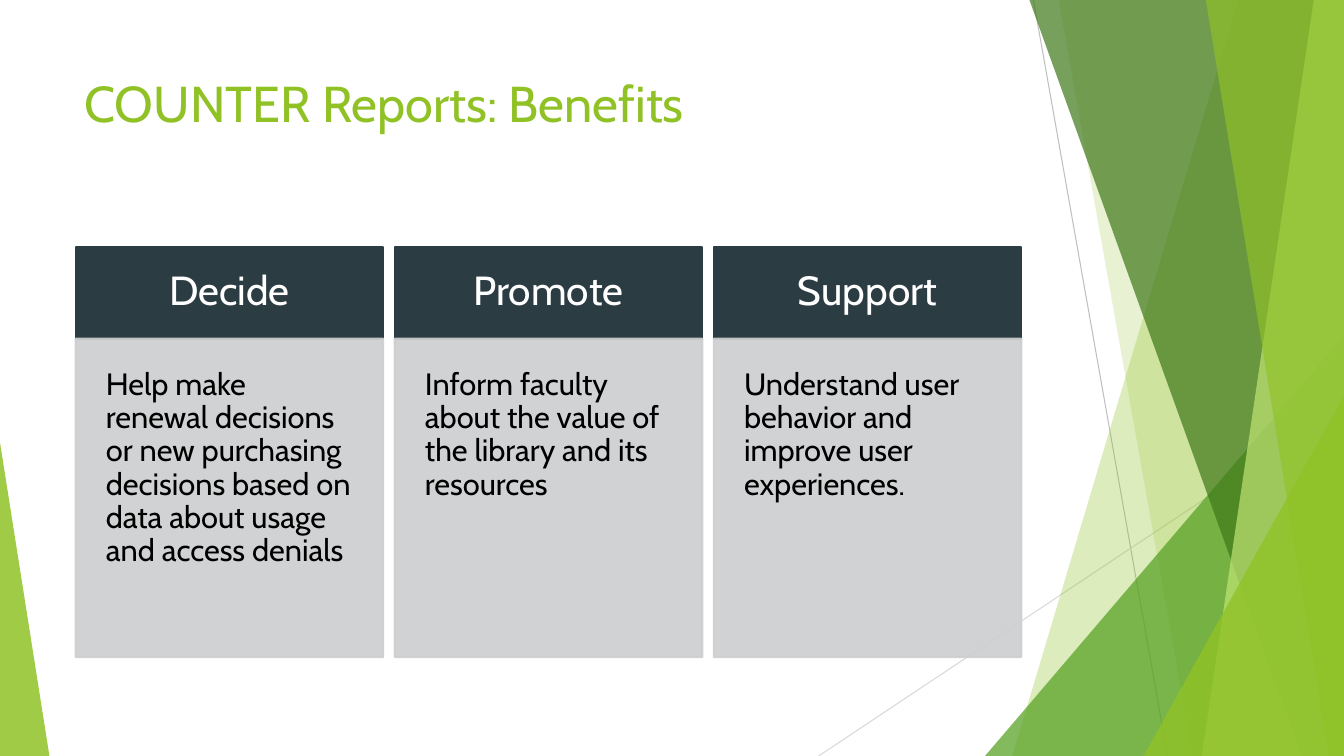
import pptx
import pptx.util
import pptx.dml.color
import pptx.enum.shapes
import pptx.enum.text
import pptx.oxml
import pptx.oxml.ns
from pptx.util import Inches

FONT = "Cabin"
COLORS = {
    "lime": "90C226", "green": "54A021", "forest": "3F7819", "pale": "C0E474",
    "slate": "2C3C43", "silver": "CDCECF", "white": "FFFFFF", "black": "000000",
    "gray": "BFBFBF", "light_gray": "D9D9D9",
}
ALIGN = pptx.enum.text.PP_ALIGN
ANCHOR = pptx.enum.text.MSO_ANCHOR
SHAPES = pptx.enum.shapes.MSO_SHAPE

BENEFITS = [
    ("Decide", "Help make renewal decisions or new purchasing decisions "
               "based on data about usage and access denials"),
    ("Promote", "Inform faculty about the value of the library and its resources"),
    ("Support", "Understand user behavior and improve user experiences."),
]
HEADING = {"size": 29, "color": "white", "inset": 0.24,
           "anchor": ANCHOR.MIDDLE, "align": ALIGN.CENTER, "spacing": 0.9}
DETAIL = {"size": 22, "color": "black", "inset": 0.3,
          "anchor": ANCHOR.TOP, "align": ALIGN.LEFT, "spacing": 0.9}
TITLE = {"size": 36, "color": "lime", "inset": 0.1,
         "anchor": ANCHOR.TOP, "align": ALIGN.LEFT, "spacing": 1.0}


def rgb(name):
    return pptx.dml.color.RGBColor.from_string(COLORS[name])


def paint(fill, color, opacity=100):
    """Fill solidly, with opacity in percent."""
    fill.solid()
    fill.fore_color.rgb = rgb(color)
    if opacity < 100:
        for node in fill._xPr.iter(pptx.oxml.ns.qn("a:srgbClr")):
            alpha = node.makeelement(pptx.oxml.ns.qn("a:alpha"), {"val": str(opacity * 1000)})
            node.append(alpha)


def write(shape, text, style):
    frame = shape.text_frame
    inset = Inches(style["inset"])
    frame_values = {"word_wrap": True, "vertical_anchor": style["anchor"],
                    "margin_left": inset, "margin_right": inset,
                    "margin_top": min(inset, Inches(0.05)) if style is TITLE else inset,
                    "margin_bottom": min(inset, Inches(0.05)) if style is TITLE else inset}
    for name, value in frame_values.items():
        setattr(frame, name, value)
    para = frame.paragraphs[0]
    para.alignment = style["align"]
    para.line_spacing = style["spacing"]
    span = para.add_run()
    span.text = text
    for name, value in {"name": FONT, "size": pptx.util.Pt(style["size"])}.items():
        setattr(span.font, name, value)
    span.font.color.rgb = rgb(style["color"])


def add_ray(page, start, end, color):
    ray = page.shapes.add_connector(pptx.enum.shapes.MSO_CONNECTOR.STRAIGHT,
                                    *map(Inches, start + end))
    ray.line.color.rgb = rgb(color)
    ray.line.width = pptx.util.Pt(0.75)
    ray._element.spPr.append(pptx.oxml.parse_xml(
        f'<a:effectLst {pptx.oxml.ns.nsdecls("a")}/>'))


def add_facet(page, box, top, bottom, color, opacity):
    """Four-sided facet running from a slanted left edge to the right of the box."""
    left, upper, width, height = box
    right, lower = left + width, upper + height
    corners = [(right, upper), (right, lower), (bottom, lower)]
    builder = page.shapes.build_freeform(Inches(top), Inches(upper), scale=1.0)
    builder.add_line_segments([(Inches(x), Inches(y)) for x, y in corners], close=True)
    facet = builder.convert_to_shape()
    facet.shadow.inherit = False
    paint(facet.fill, color, opacity)
    facet.line.fill.background()


def add_triangle(page, box, apex, color, opacity):
    triangle = page.shapes.add_shape(SHAPES.ISOSCELES_TRIANGLE, *map(Inches, box))
    triangle.adjustments[0] = apex
    triangle.shadow.inherit = False
    paint(triangle.fill, color, opacity)
    triangle.line.fill.background()


def add_backdrop(page, box):
    left, top, width, height = box
    right, bottom = left + width, top + height

    def corner(wide, high):
        return right - wide, bottom - high, wide, high

    add_ray(page, (10.25, top), (11.58, bottom), "gray")
    add_ray(page, (right, 4.03), (8.12, bottom), "light_gray")
    add_facet(page, box, 12.28, 10.04, "lime", 30)
    add_facet(page, box, 10.5, 11.83, "lime", 20)
    add_triangle(page, corner(3.56, 4.17), 1, "green", 72)
    add_facet(page, box, 10.21, 12.91, "forest", 70)
    add_facet(page, box, 13.03, 11.92, "pale", 70)
    add_facet(page, box, 11.96, 13.18, "lime", 65)
    add_triangle(page, corner(1.99, 3.57), 1, "lime", 80)
    add_triangle(page, (left, bottom - 3.11, 0.49, 3.11), 0, "lime", 85)


def add_title(page, box, text):
    write(page.shapes.add_textbox(*map(Inches, box)), text, TITLE)


def add_panel(page, box, text, style, color, opacity=100):
    panel = page.shapes.add_shape(SHAPES.RECTANGLE, *map(Inches, box))
    panel.shadow.inherit = False
    panel.line.width = pptx.util.Pt(1.5)
    paint(panel.fill, color)
    paint(panel.line.fill, color, opacity)
    paint(panel.fill, color, opacity)
    write(panel, text, style)


def add_benefits(page, box, benefits):
    left, top, width, height = box
    gap, head = 0.115, 0.91
    column = (width - gap * (len(benefits) - 1)) / len(benefits)
    for index, (heading, detail) in enumerate(benefits):
        x = left + index * (column + gap)
        add_panel(page, (x, top, column, head), heading, HEADING, "slate")
        add_panel(page, (x, top + head, column, height - head), detail, DETAIL, "silver", 90)


def main():
    deck = pptx.Presentation()
    deck.slide_width, deck.slide_height = Inches(13.33), Inches(7.5)
    page = deck.slides.add_slide(deck.slide_layouts[6])
    add_backdrop(page, (0, 0, 13.33, 7.5))
    add_title(page, (0.74, 0.67, 9.4, 1.44), "COUNTER Reports: Benefits")
    add_benefits(page, (0.75, 2.45, 9.38, 4.07), BENEFITS)
    deck.save("out.pptx")


if __name__ == "__main__":
    main()
